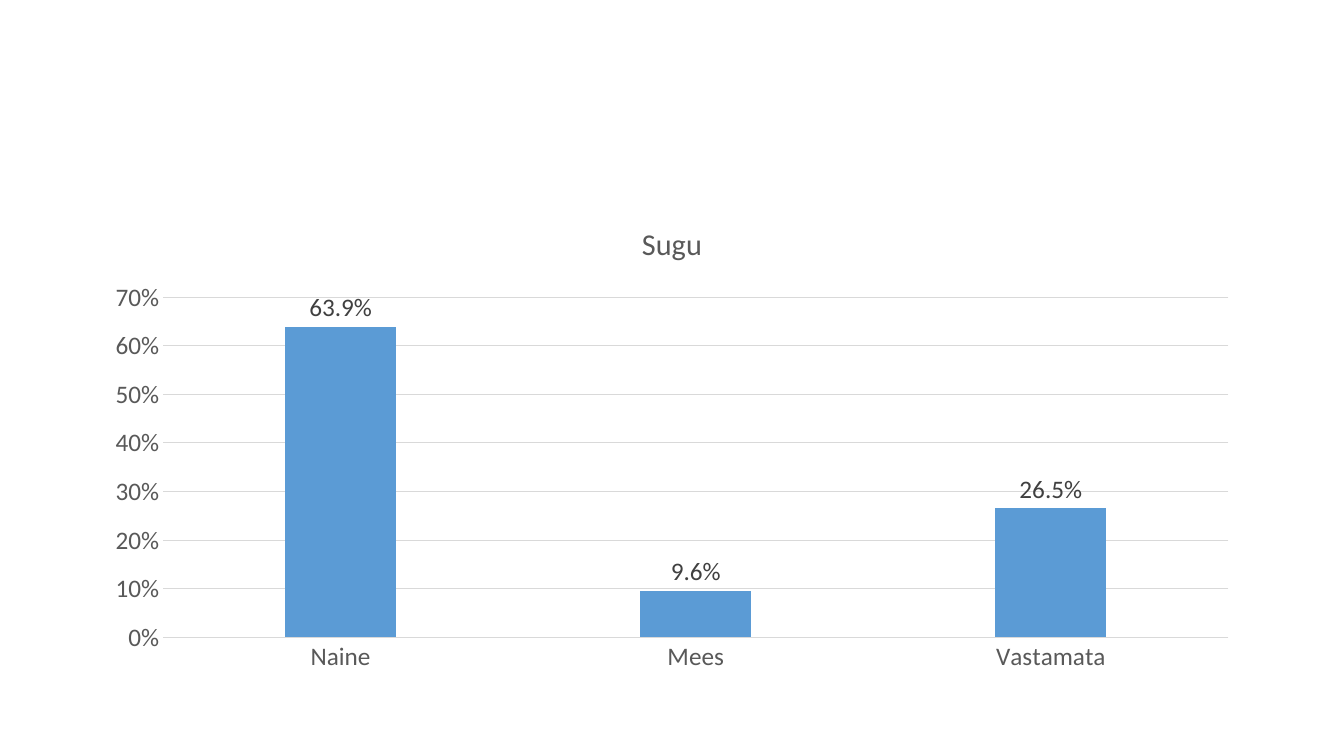
from pptx import Presentation
from pptx.chart.data import CategoryChartData
from pptx.dml.color import RGBColor
from pptx.enum import chart as kinds
from pptx.util import Pt

COLORS = {"bar": "5B9BD5", "grid": "D9D9D9", "text": "595959", "label": "404040"}
SHARES = {"Naine": 0.639, "Mees": 0.096, "Vastamata": 0.265}


def color(name):
    return RGBColor.from_string(COLORS[name])


def style_font(font, size, name):
    font.name = "Calibri"
    font.size = Pt(size)
    font.bold = False
    font.color.rgb = color(name)


def style_line(line):
    line.color.rgb = color("grid")
    line.width = Pt(0.75)


def add_title(chart, title):
    chart.has_title = True
    frame = chart.chart_title.text_frame
    frame.text = title
    style_font(frame.paragraphs[0].runs[0].font, 21.6, "text")
    chart.chart_title.include_in_layout = False


def style_axes(chart):
    for axis in (chart.category_axis, chart.value_axis):
        axis.major_tick_mark = kinds.XL_TICK_MARK.NONE
        axis.minor_tick_mark = kinds.XL_TICK_MARK.NONE
        style_font(axis.tick_labels.font, 18, "text")
    style_line(chart.category_axis.format.line)
    scale = chart.value_axis
    scale.minimum_scale = 0
    scale.maximum_scale = 0.7
    scale.major_unit = 0.1
    scale.format.line.fill.background()
    scale.has_major_gridlines = True
    style_line(scale.major_gridlines.format.line)
    scale.tick_labels.number_format = "0%"
    scale.tick_labels.number_format_is_linked = False


def style_bars(plot):
    plot.gap_width = 219
    plot.overlap = -27
    plot.vary_by_categories = False
    fill = plot.series[0].format.fill
    fill.solid()
    fill.fore_color.rgb = color("bar")
    plot.has_data_labels = True
    labels = plot.data_labels
    labels.show_value = True
    labels.number_format = "0.0%"
    labels.number_format_is_linked = False
    labels.position = kinds.XL_LABEL_POSITION.OUTSIDE_END
    style_font(labels.font, 18, "label")


def add_bars(slide, title, shares):
    data = CategoryChartData(number_format="0.0%")
    data.categories = list(shares)
    data.add_series("Series 1", list(shares.values()))
    chart = slide.shapes.add_chart(
        kinds.XL_CHART_TYPE.COLUMN_CLUSTERED, Pt(66), Pt(144), Pt(828), Pt(342.6), data
    ).chart
    chart.has_legend = False
    style_font(chart.font, 18, "text")
    add_title(chart, title)
    style_axes(chart)
    style_bars(chart.plots[0])


def main():
    deck = Presentation()
    deck.slide_width, deck.slide_height = Pt(960), Pt(540)
    slide = deck.slides.add_slide(deck.slide_layouts[6])
    add_bars(slide, "Sugu", SHARES)
    deck.save("out.pptx")


if __name__ == "__main__":
    main()
